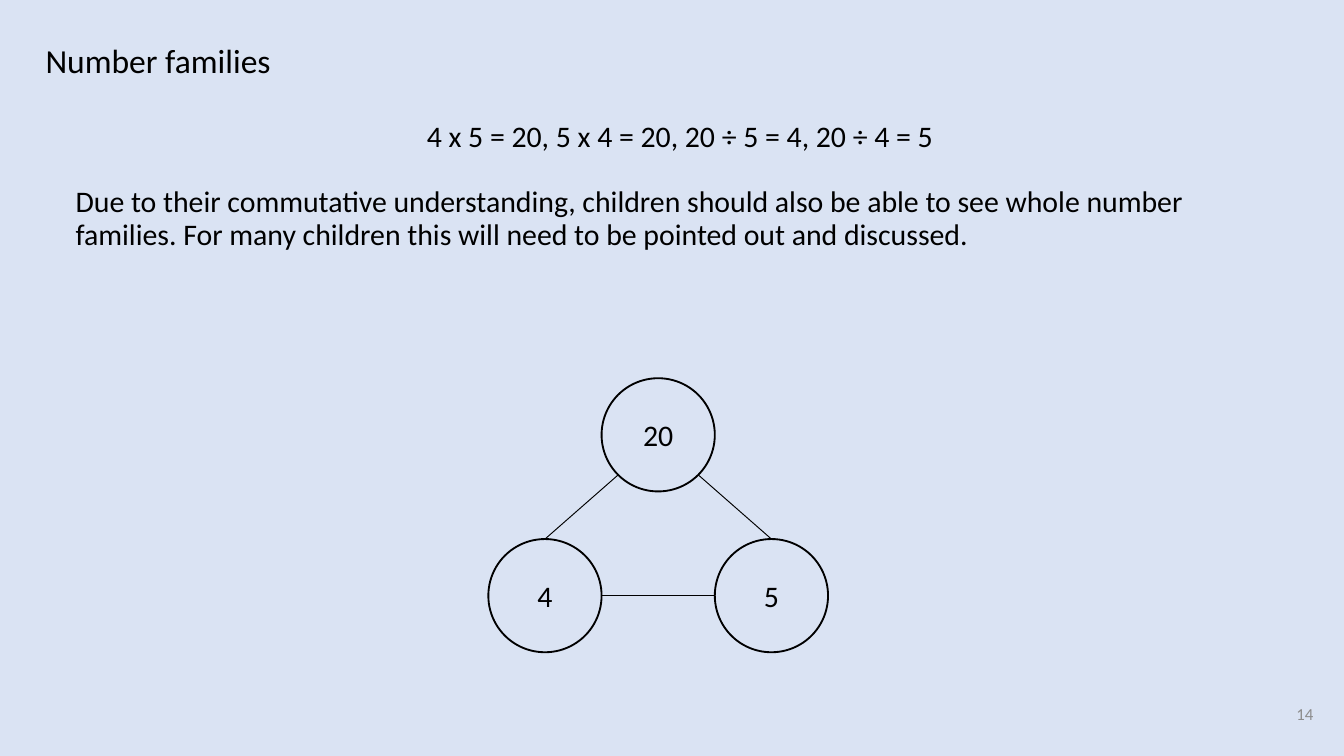
from math import sqrt
from typing import NamedTuple

from lxml.etree import SubElement
from pptx import Presentation
from pptx.dml.color import RGBColor
from pptx.enum.shapes import MSO_CONNECTOR, MSO_SHAPE
from pptx.enum.text import MSO_ANCHOR, PP_ALIGN
from pptx.oxml.ns import qn
from pptx.util import Cm, Pt

BLACK, GREY, PALE_BLUE = "000000", "8C8C8C", "DAE3F3"
DIAMETER = 2.14
RADIUS = DIAMETER / 2
DIAGONAL = RADIUS / sqrt(2)
INSET = 0.25


class Point(NamedTuple):
    x: float
    y: float

    def shifted(self, dx: float, dy: float) -> "Point":
        return Point(self.x + dx, self.y + dy)


class Number(NamedTuple):
    text: str
    centre: Point


def colour(value: str) -> RGBColor:
    return RGBColor.from_string(value)


def write(shape, lines: list[str], size: float, align=PP_ALIGN.LEFT,
          anchor=MSO_ANCHOR.MIDDLE, ink: str = BLACK, inset: float = INSET,
          spacing: float = 1.0) -> None:
    frame = shape.text_frame
    frame.word_wrap = True
    frame.vertical_anchor = anchor
    frame.margin_left = frame.margin_right = Cm(inset)
    frame.margin_top = frame.margin_bottom = Cm(inset)
    frame.text = "\n".join(lines)
    for para in frame.paragraphs:
        para.alignment = align
        para.line_spacing = spacing
        para.space_before = Pt(0)
        for span in para.runs:
            span.font.name = "Calibri"
            span.font.size = Pt(size)
            span.font.color.rgb = colour(ink)


def draw_number(page, number: Number) -> None:
    corner = number.centre.shifted(-RADIUS, -RADIUS)
    circle = page.shapes.add_shape(MSO_SHAPE.OVAL, Cm(corner.x), Cm(corner.y),
                                   Cm(DIAMETER), Cm(DIAMETER))
    circle.shadow.inherit = False
    circle.fill.background()
    circle.line.color.rgb = colour(BLACK)
    circle.line.width = Pt(1)
    write(circle, [number.text], 16, PP_ALIGN.CENTER, inset=0.1)


def draw_link(page, start: Point, end: Point) -> None:
    link = page.shapes.add_connector(MSO_CONNECTOR.STRAIGHT, Cm(start.x), Cm(start.y),
                                     Cm(end.x), Cm(end.y))
    link.line.color.rgb = colour(BLACK)
    link.line.width = Pt(0.5)
    SubElement(link._element.spPr, qn("a:effectLst"))


def main() -> None:
    deck = Presentation()
    deck.slide_width, deck.slide_height = Cm(25.4), Cm(14.29)
    page = deck.slides.add_slide(deck.slide_layouts[5])
    page.background.fill.solid()
    page.background.fill.fore_color.rgb = colour(PALE_BLUE)

    # Title
    title = page.shapes.title
    title.left, title.top, title.width, title.height = Cm(0.61), Cm(0.58), Cm(23.67), Cm(1.22)
    write(title, ["Number families"], 18, spacing=0.9)

    # Explanation, with the equations centred above it
    body = page.shapes.add_textbox(Cm(0.86), Cm(2.06), Cm(23.67), Cm(3.56))
    write(body, [
        "4 x 5 = 20, 5 x 4 = 20, 20 ÷ 5 = 4, 20 ÷ 4 = 5",
        "Due to their commutative understanding, children should also be able to see "
        "whole number families. For many children this will need to be pointed out "
        "and discussed.",
    ], 16, anchor=MSO_ANCHOR.TOP, spacing=0.9)
    body.text_frame.margin_left = Cm(0.57)
    equations, explanation = body.text_frame.paragraphs
    equations.alignment = PP_ALIGN.CENTER
    explanation.space_before = Pt(17.6)

    # Page number
    page_number = page.shapes.add_textbox(Cm(23.55), Cm(12.95), Cm(1.52), Cm(1.09))
    write(page_number, ["14"], 9, PP_ALIGN.RIGHT, ink=GREY)

    # Number family triangle
    product = Number("20", Point(12.44, 8.22))
    left = Number("4", product.centre.shifted(-DIAMETER, 3.04))
    right = Number("5", product.centre.shifted(DIAMETER, 3.04))
    for number in (product, left, right):
        draw_number(page, number)
    for factor, side in ((left, -1), (right, 1)):
        draw_link(page, product.centre.shifted(side * DIAGONAL, DIAGONAL),
                  factor.centre.shifted(0, -RADIUS))
    draw_link(page, left.centre.shifted(RADIUS, 0), right.centre.shifted(-RADIUS, 0))

    deck.save("out.pptx")


if __name__ == "__main__":
    main()
